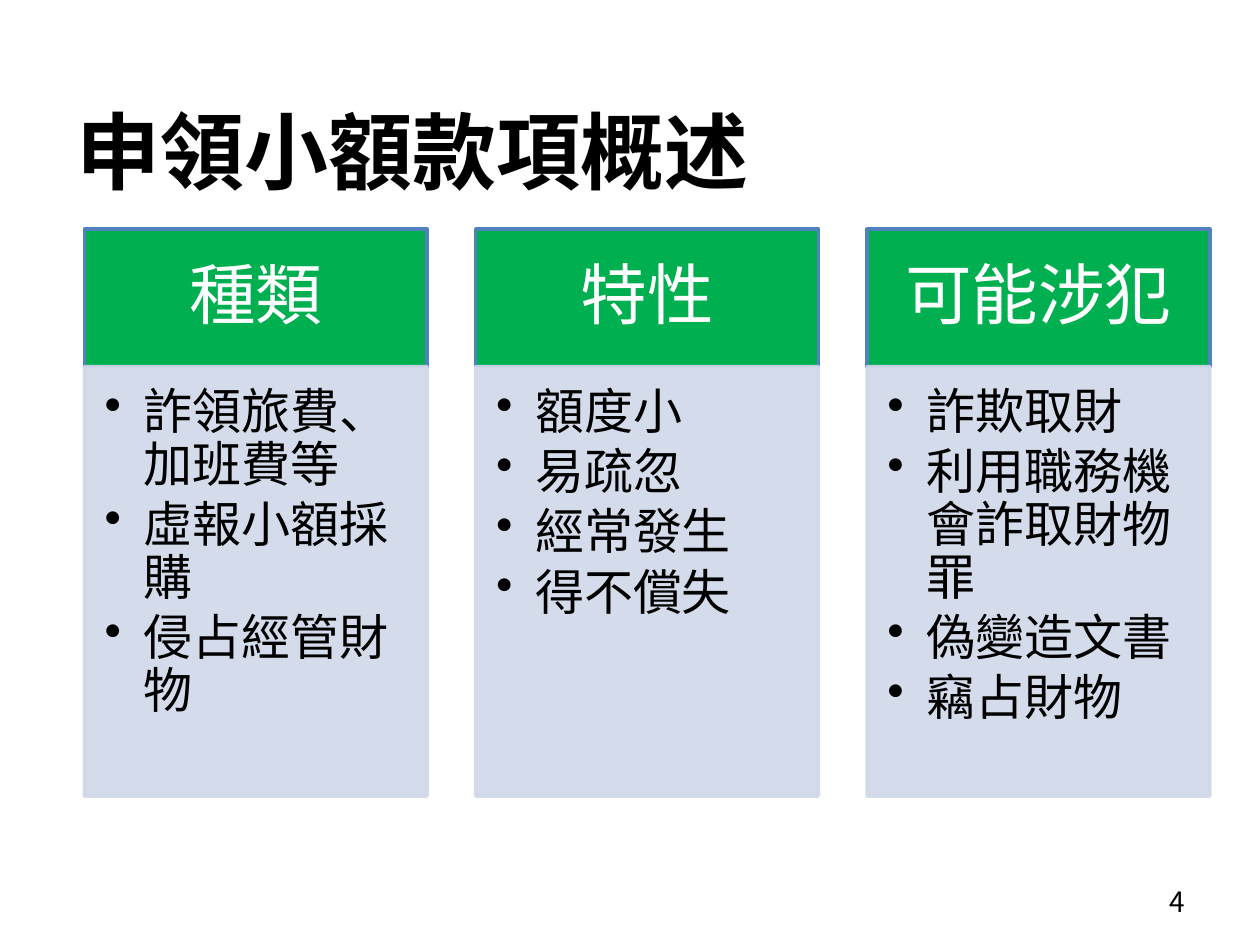
from lxml.etree import SubElement
from pptx import Presentation
from pptx.dml.color import RGBColor
from pptx.enum.shapes import MSO_SHAPE
from pptx.enum.text import MSO_ANCHOR, MSO_AUTO_SIZE, PP_ALIGN
from pptx.oxml.ns import qn
from pptx.util import Cm, Pt

FONT = "Noto Sans CJK SC"
LEFT, TOP = 1.7, 4.62
COLUMN_WIDTH, COLUMN_STEP = 6.91, 7.89
HEADER_HEIGHT, BODY_HEIGHT = 2.77, 8.66
BULLET_INDENT = 0.79

COLUMNS = [
    ("種類", ["詐領旅費、加班費等", "虛報小額採購", "侵占經管財物"]),
    ("特性", ["額度小", "易疏忽", "經常發生", "得不償失"]),
    ("可能涉犯", ["詐欺取財", "利用職務機會詐取財物罪", "偽變造文書", "竊占財物"]),
]


def color(code):
    return RGBColor.from_string(code)


def add_bullet(para):
    properties = para._p.get_or_add_pPr()
    properties.set("marL", str(Cm(BULLET_INDENT)))
    properties.set("indent", str(-Cm(BULLET_INDENT)))
    SubElement(properties, qn("a:buChar")).set("char", "•")


def write_text(shape, lines, *, size, ink="000000", font=FONT, bold=False,
               align=PP_ALIGN.LEFT, anchor=MSO_ANCHOR.TOP, margins=None,
               wrap=True, spacing=None, after=None, bullets=False):
    """Fill a shape with one formatted paragraph per line; margins are in cm."""
    frame = shape.text_frame
    frame.word_wrap = wrap
    frame.vertical_anchor = anchor
    if margins:
        (frame.margin_left, frame.margin_top,
         frame.margin_right, frame.margin_bottom) = map(Cm, margins)
    for index, line in enumerate(lines):
        para = frame.add_paragraph() if index else frame.paragraphs[0]
        para.alignment = align
        if spacing:
            para.line_spacing = spacing
        if after:
            para.space_after = Pt(after)
        if bullets:
            add_bullet(para)
        span = para.add_run()
        span.text = line
        span.font.size = Pt(size)
        span.font.bold = bold
        span.font.color.rgb = color(ink)
        span.font.name = font
        SubElement(span.font._element, qn("a:ea")).set("typeface", font)


def add_text_box(page, left, top, width, height, text, **style):
    box = page.shapes.add_textbox(Cm(left), Cm(top), Cm(width), Cm(height))
    write_text(box, [text], **style)
    return box


def add_panel(page, left, top, height, fill, line, opacity=100):
    panel = page.shapes.add_shape(
        MSO_SHAPE.RECTANGLE, Cm(left), Cm(top), Cm(COLUMN_WIDTH), Cm(height))
    panel.shadow.inherit = False
    panel.fill.solid()
    panel.fill.fore_color.rgb = color(fill)
    panel.line.color.rgb = color(line)
    panel.line.width = Pt(2)
    if opacity < 100:
        for tint in panel._element.spPr.iter(qn("a:srgbClr")):
            SubElement(tint, qn("a:alpha")).set("val", str(opacity * 1000))
    return panel


def add_column(page, left, heading, items):
    header = add_panel(page, left, TOP, HEADER_HEIGHT, "00B050", "4F81BD")
    write_text(header, [heading], size=38, ink="FFFFFF", align=PP_ALIGN.CENTER,
               anchor=MSO_ANCHOR.MIDDLE, margins=(0.76, 0.43, 0.76, 0.43),
               spacing=0.9, after=13.3)
    body = add_panel(page, left, TOP + HEADER_HEIGHT, BODY_HEIGHT,
                     "D0D8E8", "D0D8E8", opacity=90)
    write_text(body, items, size=28, margins=(0.41, 0.41, 0.56, 0.61),
               spacing=0.9, after=4.2, bullets=True)


def main():
    deck = Presentation()
    deck.slide_width, deck.slide_height = Cm(25.4), Cm(19.05)
    page = deck.slides.add_slide(deck.slide_layouts[6])
    add_text_box(page, 18.21, 17.65, 5.92, 1.02, "4", size=16,
                 font="Noto Sans CJK TC", align=PP_ALIGN.RIGHT,
                 anchor=MSO_ANCHOR.MIDDLE)
    for index, (heading, items) in enumerate(COLUMNS):
        add_column(page, LEFT + index * COLUMN_STEP, heading, items)
    title = add_text_box(page, 1.3, 1.88, 14.2, 2.31, "申領小額款項概述",
                         size=48, bold=True, wrap=False)
    title.text_frame.auto_size = MSO_AUTO_SIZE.SHAPE_TO_FIT_TEXT
    deck.save("out.pptx")


if __name__ == "__main__":
    main()
